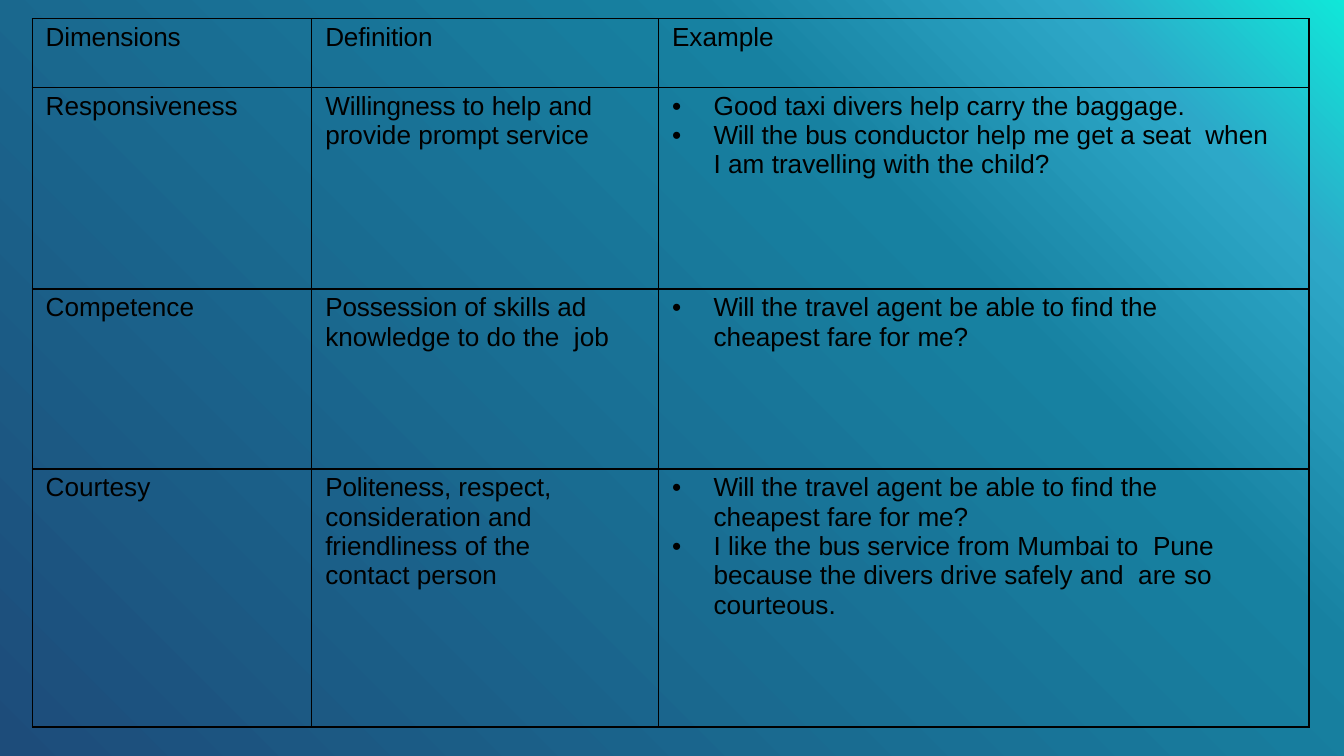
from lxml import etree
from pptx import Presentation
from pptx import util as u
from pptx.dml.color import RGBColor
from pptx.oxml import ns

# Content: each cell is a list of paragraphs, each paragraph a list of runs.
# A run is plain text, or (text, letter spacing in points).
FIND_FARE = [("Will ", -0.2),
             "the travel agent be able to find the  cheapest fare for ",
             ("me?", -0.1)]
HEADINGS = [[[(name, spacing)]] for name, spacing in
            (("Dimensions", -0.1), ("Definition", -0.1), ("Example", 0))]
ROWS = [
    HEADINGS,
    [
        [["Responsiveness"]],
        [[("Willingness ", -0.1), "to help and  provide ",
          ("prompt ", -0.1), "service"]],
        [["Good taxi divers help carry the baggage."],
         [("Will ", -0.2), "the ", ("bus ", -0.1), "conductor help ",
          ("me ", -0.1), "get a ", ("seat  ", -0.1),
          "when I am travelling with the child?"]],
    ],
    [
        [["Competence"]],
        [[("Possession ", -0.1), "of skills ad  knowledge to do the  job"]],
        [FIND_FARE],
    ],
    [
        [["Courtesy"]],
        [[("Politeness, ", -0.1),
          "respect,  consideration and  friendliness of the  contact person"]],
        [FIND_FARE,
         ["I like the ", ("bus ", -0.1), "service from ", ("Mumbai ", -0.1),
          "to  ", ("Pune ", -0.1), "because the divers drive safely and  are ",
          ("so ", -0.1), "courteous."]],
    ],
]

THEME = {
    "font": "Arial", "size": 14, "ink": "000000", "border": 0.75,
    "gradient": [(0, "10E7D9"), (13, "2DA8C8"), (31, "1781A1"), (100, "1D4C7A")],
}
LEFT, TOP = 0.24, 0.14
COLUMN_WIDTHS = [2.08, 2.58, 4.84]
ROW_HEIGHTS = [0.51, 1.5, 1.34, 1.92]
TEXT_INDENT, BULLET_INDENT, BULLET_HANG = 0.1, 0.41, 0.31
RIGHT_INDENT = 0.25


def add_element(parent, tag, **attributes):
    element = etree.SubElement(parent, ns.qn(tag))
    for name, value in attributes.items():
        element.set(name, str(value))
    return element


def add_color(parent, color):
    add_element(parent, "a:srgbClr", val=color)


def set_background(slide):
    fill = slide.background.fill
    fill.gradient()
    fill.gradient_angle = 225  # counter-clockwise: top right to bottom left
    stops = next(slide.element.iter(ns.qn("a:gsLst")))
    for stop in list(stops):
        stops.remove(stop)
    for position, color in THEME["gradient"]:
        add_color(add_element(stops, "a:gs", pos=position * 1000), color)


def set_borders(cell):
    properties = cell._tc.get_or_add_tcPr()
    for side in "LRTB":
        line = add_element(properties, "a:ln" + side, w=u.Pt(THEME["border"]))
        add_color(add_element(line, "a:solidFill"), THEME["ink"])


def set_indent(paragraph, bulleted):
    properties = paragraph._p.get_or_add_pPr()
    indent = BULLET_INDENT if bulleted else TEXT_INDENT
    properties.set("marL", str(u.Inches(indent)))
    properties.set("marR", str(u.Inches(RIGHT_INDENT)))
    properties.set("indent", str(u.Inches(-BULLET_HANG if bulleted else 0)))
    if bulleted:
        add_color(add_element(properties, "a:buClr"), THEME["ink"])
        add_element(properties, "a:buFont", typeface=THEME["font"])
        add_element(properties, "a:buChar", char="•")


def add_run(paragraph, text, spacing=0):
    run = paragraph.add_run()
    run.text = text
    run.font.name = THEME["font"]
    run.font.size = u.Pt(THEME["size"])
    run.font.color.rgb = RGBColor.from_string(THEME["ink"])
    if spacing:
        run.font._element.set("spc", str(round(spacing * 100)))


def fill_cell(cell, paragraphs, bulleted):
    set_borders(cell)
    cell.fill.background()
    cell.margin_left = cell.margin_right = cell.margin_bottom = 0
    cell.margin_top = u.Inches(0.03)
    frame = cell.text_frame
    for index, runs in enumerate(paragraphs):
        paragraph = frame.add_paragraph() if index else frame.paragraphs[0]
        set_indent(paragraph, bulleted)
        for run in runs:
            add_run(paragraph, *([run] if isinstance(run, str) else run))


def main():
    presentation = Presentation()
    presentation.slide_width = u.Inches(10)
    presentation.slide_height = u.Inches(10 * 9 / 16)  # widescreen
    slide = presentation.slides.add_slide(presentation.slide_layouts[6])
    set_background(slide)

    # Table of service dimensions
    table = slide.shapes.add_table(
        len(ROWS), len(COLUMN_WIDTHS), u.Inches(LEFT), u.Inches(TOP),
        u.Inches(sum(COLUMN_WIDTHS)), u.Inches(sum(ROW_HEIGHTS))).table
    table.first_row = table.horz_banding = False
    for column, width in zip(table.columns, COLUMN_WIDTHS):
        column.width = u.Inches(width)
    for row, height in zip(table.rows, ROW_HEIGHTS):
        row.height = u.Inches(height)
    for row_index, row in enumerate(ROWS):
        for column_index, paragraphs in enumerate(row):
            bulleted = row_index > 0 and column_index == 2
            fill_cell(table.cell(row_index, column_index), paragraphs, bulleted)

    presentation.save("out.pptx")


if __name__ == "__main__":
    main()
